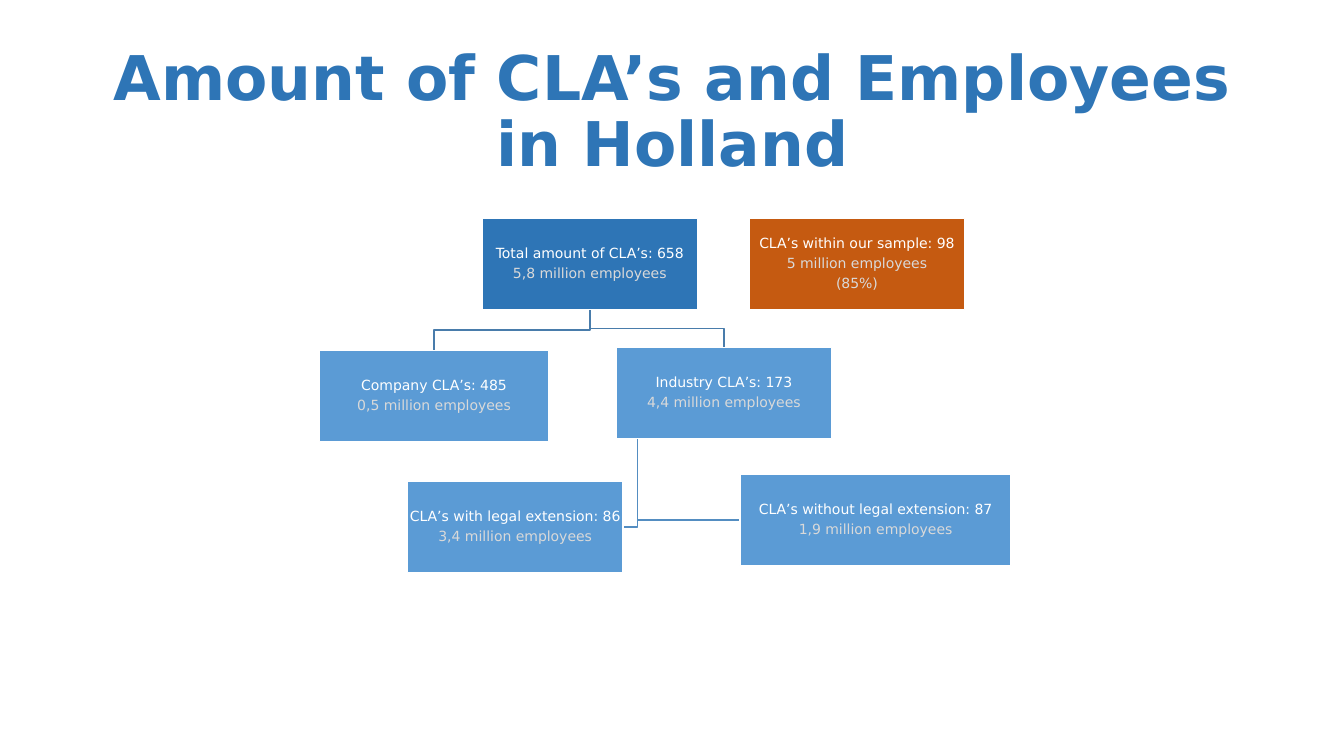
from dataclasses import dataclass

from pptx import Presentation
from pptx.dml.color import RGBColor
from pptx.enum.shapes import MSO_SHAPE
from pptx.enum.text import MSO_ANCHOR, MSO_AUTO_SIZE, PP_ALIGN
from pptx.util import Inches, Pt

FONT = "DejaVu Sans"
DARK_BLUE = RGBColor(0x2E, 0x75, 0xB6)
LIGHT_BLUE = RGBColor(0x5B, 0x9B, 0xD5)
ORANGE = RGBColor(0xC5, 0x5A, 0x11)
UPPER_LINK = RGBColor(0x49, 0x7C, 0xAB)
LOWER_LINK = RGBColor(0x53, 0x8D, 0xC1)
WHITE = RGBColor(0xFF, 0xFF, 0xFF)
PALE_GREY = RGBColor(0xD9, 0xD9, 0xD9)

NODE_W, NODE_H = 31.2, 25.64
NODES = {
    "total": (23.47, 0, NODE_W, DARK_BLUE,
              ["Total amount of CLA’s: 658", "5,8 million employees"]),
    "company": (0, 37.32, 33.09, LIGHT_BLUE,
                ["Company CLA’s: 485", "0,5 million employees"]),
    "industry": (42.86, 36.47, NODE_W, LIGHT_BLUE,
                 ["Industry CLA’s: 173", "4,4 million employees"]),
    "without": (60.79, 72.36, 39.21, LIGHT_BLUE,
                ["CLA’s without legal extension: 87", "1,9 million employees"]),
    "with": (12.68, 74.36, NODE_W, LIGHT_BLUE,
             ["CLA’s with legal extension: 86", "3,4 million employees"]),
    "sample": (62.1, 0, NODE_W, ORANGE,
               ["CLA’s within our sample: 98", "5 million employees", "(85%)"]),
}


@dataclass
class Box:
    left: float
    top: float
    width: float
    height: float

    def inner(self, x, y, w, h):
        return Box(self.left + self.width * x / 100, self.top + self.height * y / 100,
                   self.width * w / 100, self.height * h / 100)

    def point(self, x, y):
        return self.left + self.width * x / 100, self.top + self.height * y / 100

    def emu(self):
        return [Inches(v) for v in (self.left, self.top, self.width, self.height)]


def format_paragraph(p, size, color, bold=False):
    p.alignment = PP_ALIGN.CENTER
    p.line_spacing = 0.9
    for r in p.runs:
        r.font.name = FONT
        r.font.size = Pt(size)
        r.font.bold = bold
        r.font.color.rgb = color


def add_title(s, box):
    sp = s.shapes.title
    sp.left, sp.top, sp.width, sp.height = box.emu()
    tf = sp.text_frame
    tf.text = "Amount of CLA’s and Employees in Holland"
    tf.word_wrap = True
    tf.auto_size = MSO_AUTO_SIZE.NONE
    tf.vertical_anchor = MSO_ANCHOR.MIDDLE
    format_paragraph(tf.paragraphs[0], 44, DARK_BLUE, bold=True)


def add_link(shapes, points, color):
    start, *rest = [(Inches(x), Inches(y)) for x, y in points]
    builder = shapes.build_freeform(*start)
    builder.add_line_segments(rest, close=False)
    sp = builder.convert_to_shape()
    sp.shadow.inherit = False
    sp.fill.background()
    sp.line.color.rgb = color
    sp.line.width = Pt(1)


def add_node(shapes, box, color, lines):
    sp = shapes.add_shape(MSO_SHAPE.RECTANGLE, *box.emu())
    sp.shadow.inherit = False
    sp.fill.solid()
    sp.fill.fore_color.rgb = color
    sp.line.color.rgb = WHITE
    sp.line.width = Pt(1)
    tf = sp.text_frame
    tf.text = "\n".join(lines)
    tf.word_wrap = True
    tf.vertical_anchor = MSO_ANCHOR.MIDDLE
    tf.margin_left = tf.margin_right = tf.margin_top = tf.margin_bottom = Inches(0.01)
    for i, p in enumerate(tf.paragraphs):
        format_paragraph(p, 10, PALE_GREY if i else WHITE)
        p.space_after = Pt(3.5)


def add_hierarchy(s, box):
    shapes = s.shapes.add_group_shape().shapes
    boxes = {name: box.inner(x, y, w, NODE_H) for name, (x, y, w, *_) in NODES.items()}

    stem = boxes["industry"].point(10, 100)
    for name, side in (("with", 100), ("without", 0)):
        end = boxes[name].point(side, 50)
        add_link(shapes, [stem, (stem[0], end[1]), end], LOWER_LINK)

    start = boxes["total"].point(50, 100)
    for name in ("industry", "company"):
        end = boxes[name].point(50, 0)
        middle = (start[1] + end[1]) / 2
        add_link(shapes, [start, (start[0], middle), (end[0], middle), end], UPPER_LINK)

    for name, (*_, color, lines) in NODES.items():
        add_node(shapes, boxes[name], color, lines)


def main():
    prs = Presentation()
    slide_box = Box(0, 0, 13.33, 7.5)
    prs.slide_width, prs.slide_height = slide_box.emu()[2:]
    s = prs.slides.add_slide(prs.slide_layouts[5])
    add_title(s, slide_box.inner(6.9, 5.33, 86.27, 19.33))
    add_hierarchy(s, slide_box.inner(23.78, 28.93, 51.46, 46.8))
    prs.save("out.pptx")


if __name__ == "__main__":
    main()
